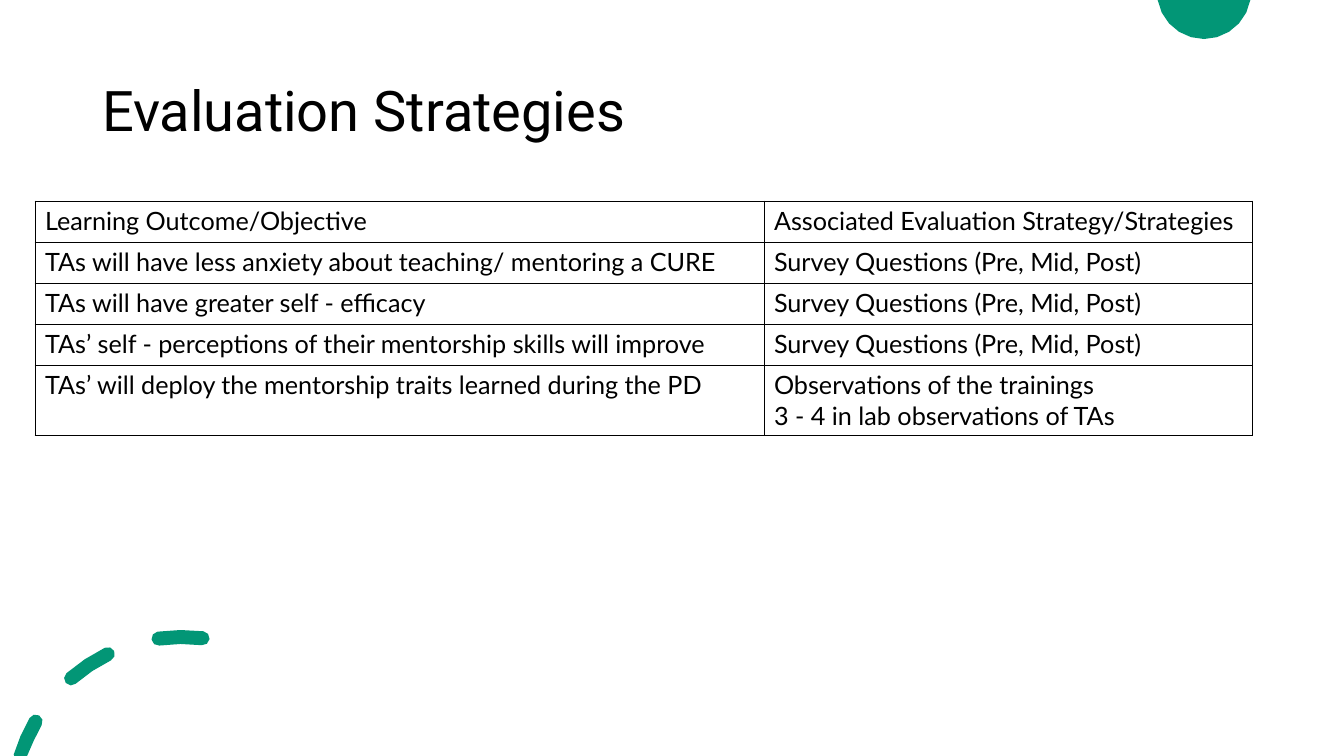
from dataclasses import dataclass
from math import cos, radians, sin

from lxml.etree import SubElement
from pptx import Presentation
from pptx.dml.color import RGBColor
from pptx.enum.text import MSO_ANCHOR, PP_ALIGN
from pptx.oxml.ns import qn
from pptx.util import Emu, Pt

SLIDE_W, SLIDE_H = 1344, 756

ROWS = [
    ("Learning Outcome/Objective", "Associated Evaluation Strategy/Strategies"),
    ("TAs will have less anxiety about teaching/ mentoring a CURE",
     "Survey Questions (Pre, Mid, Post)"),
    ("TAs will have greater self - efficacy", "Survey Questions (Pre, Mid, Post)"),
    ("TAs’ self - perceptions of their mentorship skills will improve",
     "Survey Questions (Pre, Mid, Post)"),
    ("TAs’ will deploy the mentorship traits learned during the PD",
     "Observations of the trainings\v3 - 4 in lab observations of TAs"),
]


@dataclass(frozen=True)
class Theme:
    accent: str = "029676"
    ink: str = "000000"
    title_font: str = "Roboto"
    title_size: int = 40
    body_font: str = "Lato"
    body_size: int = 18
    border: float = 0.5


def px(n):
    return Emu(round(n * 914400 / 100.8))


def arc(cx, cy, radius, start, end, steps):
    """Points on an arc; degrees run clockwise from the top."""
    angles = (radians(start + (end - start) * i / steps) for i in range(steps + 1))
    return [(cx + radius * sin(a), cy - radius * cos(a)) for a in angles]


def round_dash(cx, cy, radius, start, end, half=7):
    """Outline of a thick arc with round ends."""
    first, last = arc(cx, cy, radius, start, end, 1)
    return (arc(cx, cy, radius + half, start, end, 2)
            + arc(*last, half, end, end + 180, 4)[1:-1]
            + arc(cx, cy, radius - half, end, start, 2)
            + arc(*first, half, start + 180, start + 360, 4)[1:-1])


class SlideBuilder:
    def __init__(self, slide, theme):
        self.s = slide
        self.theme = theme

    def style(self, p, font, size):
        p.font.name = font
        p.font.size = Pt(size)
        p.font.color.rgb = RGBColor.from_string(self.theme.ink)

    def title(self, text, x, y, w, h):
        sp = self.s.shapes.title
        sp.left, sp.top, sp.width, sp.height = map(px, (x, y, w, h))
        tf = sp.text_frame
        tf.text = text
        tf.vertical_anchor = MSO_ANCHOR.MIDDLE
        p = tf.paragraphs[0]
        p.alignment = PP_ALIGN.LEFT
        p.line_spacing = 0.9
        self.style(p, self.theme.title_font, self.theme.title_size)

    def outlines(self, contours):
        """One filled shape from contours, cut flat at the slide's bottom."""
        cut = [[(px(x), px(min(y, SLIDE_H))) for x, y in c] for c in contours]
        fb = self.s.shapes.build_freeform(*cut[0][0])
        for i, points in enumerate(cut):
            if i:
                fb.move_to(*points[0])
            fb.add_line_segments(points[1:], close=True)
        sp = fb.convert_to_shape()
        sp.shadow.inherit = False
        sp.fill.solid()
        sp.fill.fore_color.rgb = RGBColor.from_string(self.theme.accent)
        sp.line.fill.background()

    def borders(self, cell):
        tc_pr = cell._tc.get_or_add_tcPr()
        for side in ("lnL", "lnR", "lnT", "lnB"):
            ln = SubElement(tc_pr, qn(f"a:{side}"), w=str(Pt(self.theme.border)))
            fill = SubElement(ln, qn("a:solidFill"))
            SubElement(fill, qn("a:srgbClr"), val=self.theme.ink)

    def table(self, rows, x, y, widths, row_height):
        frame = self.s.shapes.add_table(len(rows), len(widths), px(x), px(y),
                                        px(sum(widths)), px(row_height * len(rows)))
        table = frame.table
        table.first_row = table.horz_banding = False
        for column, width in zip(table.columns, widths):
            column.width = px(width)
        for row, texts in zip(table.rows, rows):
            row.height = px(row_height)
            for cell, text in zip(row.cells, texts):
                cell.text = text
                self.borders(cell)
                cell.fill.background()
                self.style(cell.text_frame.paragraphs[0],
                           self.theme.body_font, self.theme.body_size)


def main():
    prs = Presentation()
    prs.slide_width, prs.slide_height = px(SLIDE_W), px(SLIDE_H)
    slide = SlideBuilder(prs.slides.add_slide(prs.slide_layouts[5]), Theme())
    slide.outlines([arc(1204, -8, 47, 100, 260, 10)])
    slide.outlines([round_dash(182, 806, 169, start, end)
                    for start, end in ((-73, -60), (-41, -26), (-8, 7))])
    slide.title("Evaluation Strategies", 92, 40, 1160, 146)
    slide.table(ROWS, 35, 201, (729, 488), 41)
    prs.save("out.pptx")


if __name__ == "__main__":
    main()
